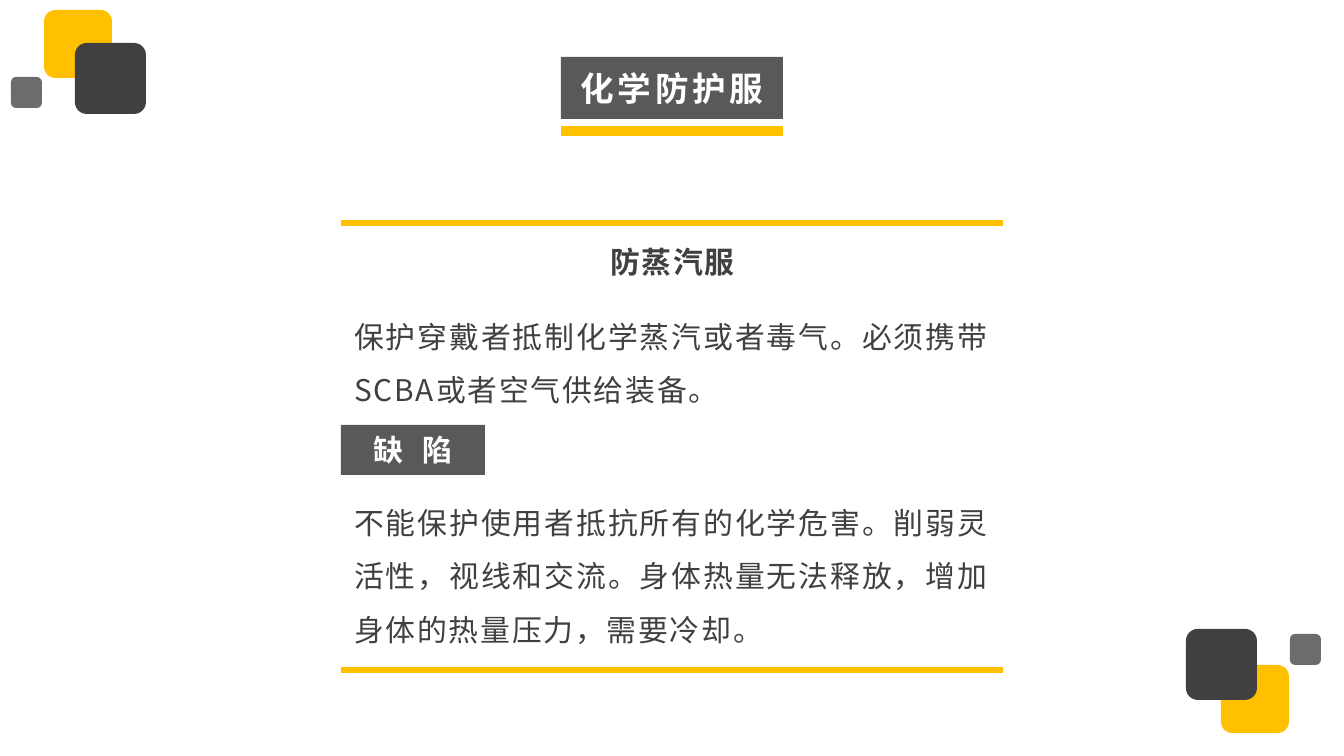
from lxml import etree
from pptx import Presentation, util as u
from pptx.dml.color import RGBColor
from pptx.enum import shapes, text
from pptx.oxml.ns import qn

PX = 914400 / 134.4
FONT = "Noto Sans CJK SC"
C = {"gold": "FFC000", "dark": "404040", "grey": "595959", "white": "FFFFFF"}
RECT = shapes.MSO_SHAPE.RECTANGLE
ROUND = shapes.MSO_SHAPE.ROUNDED_RECTANGLE
CENTER, JUSTIFY = text.PP_ALIGN.CENTER, text.PP_ALIGN.JUSTIFY

prs = Presentation()
prs.slide_width, prs.slide_height = u.Emu(round(1344 * PX)), u.Emu(round(756 * PX))
s = prs.slides.add_slide(prs.slide_layouts[6])


def add_block(kind, box, color):
    sp = s.shapes.add_shape(kind, *[u.Emu(round(v * PX)) for v in box])
    sp.shadow.inherit = False
    sp.fill.solid()
    sp.fill.fore_color.rgb = RGBColor.from_string(C[color])
    sp.line.fill.background()
    return sp


def write(sp, words, color, size, bold, spc, frame, para):
    tf = sp.text_frame
    p = tf.paragraphs[0]
    r = p.add_run()
    r.text = words
    font = {"name": FONT, "size": u.Pt(size), "bold": bold}
    base = {"word_wrap": True, "auto_size": text.MSO_AUTO_SIZE.SHAPE_TO_FIT_TEXT}
    for obj, values in ((tf, {**base, **frame}), (p, para), (r.font, font)):
        for key, value in values.items():
            setattr(obj, key, value)
    r.font.color.rgb = RGBColor.from_string(C[color])
    rPr = r._r.get_or_add_rPr()
    rPr.set("spc", str(spc))
    etree.SubElement(rPr, qn("a:ea")).set("typeface", FONT)


corner_tiles = [
    ((44, 10, 68, 68), "gold", 100),
    ((75, 43, 71, 71), "dark", 100),
    ((11, 77, 31, 31), "dark", 77),
    ((1221, 665, 68, 68), "gold", 100),
    ((1186, 629, 71, 71), "dark", 100),
    ((1290, 634, 31, 31), "dark", 77),
]
for box, color, opacity in corner_tiles:
    sp = add_block(ROUND, box, color)
    if opacity < 100:
        clr = sp.fill._xPr.find(".//" + qn("a:srgbClr"))
        etree.SubElement(clr, qn("a:alpha")).set("val", str(opacity * 1000))

middle = {"vertical_anchor": text.MSO_ANCHOR.MIDDLE}
side, edge = u.Emu(round(16 * PX)), u.Emu(round(11 * PX))
insets = {"margin_left": side, "margin_right": side, "margin_top": edge, "margin_bottom": edge}
labels = [
    ((561, 57, 222, 62), "化学防护服", 18, 200, {**middle, **insets}),
    ((341, 425, 144, 50), "缺 陷", 16, 330, {**middle, "word_wrap": False}),
]
for box, words, size, spc, frame in labels:
    sp = add_block(RECT, box, "grey")
    write(sp, words, "white", size, True, spc, frame, {"alignment": CENTER})

body = {"alignment": JUSTIFY, "line_spacing": 1.5}
passages = [
    ((590, 237, 165, 50), "防蒸汽服", True, {"alignment": CENTER}),
    ((341, 294, 662, 116), "保护穿戴者抵制化学蒸汽或者毒气。必须携带SCBA或者空气供给装备。", False, body),
    ((341, 480, 662, 171), "不能保护使用者抵抗所有的化学危害。削弱灵活性，视线和交流。"
     "身体热量无法释放，增加身体的热量压力，需要冷却。", False, body),
]
for box, words, bold, para in passages:
    sp = s.shapes.add_textbox(*[u.Emu(round(v * PX)) for v in box])
    write(sp, words, "dark", 16, bold, 100, {}, para)

for left, right, y, width in ((561, 783, 131, 5), (341, 1003, 223, 3), (341, 1003, 670, 3)):
    ends = [u.Emu(round(v * PX)) for v in (left, y, right, y)]
    rule = s.shapes.add_connector(shapes.MSO_CONNECTOR.STRAIGHT, *ends)
    rule.line.width = u.Pt(width)
    rule.line.color.rgb = RGBColor.from_string(C["gold"])
    etree.SubElement(rule._element.spPr, qn("a:effectLst"))

prs.save("out.pptx")
